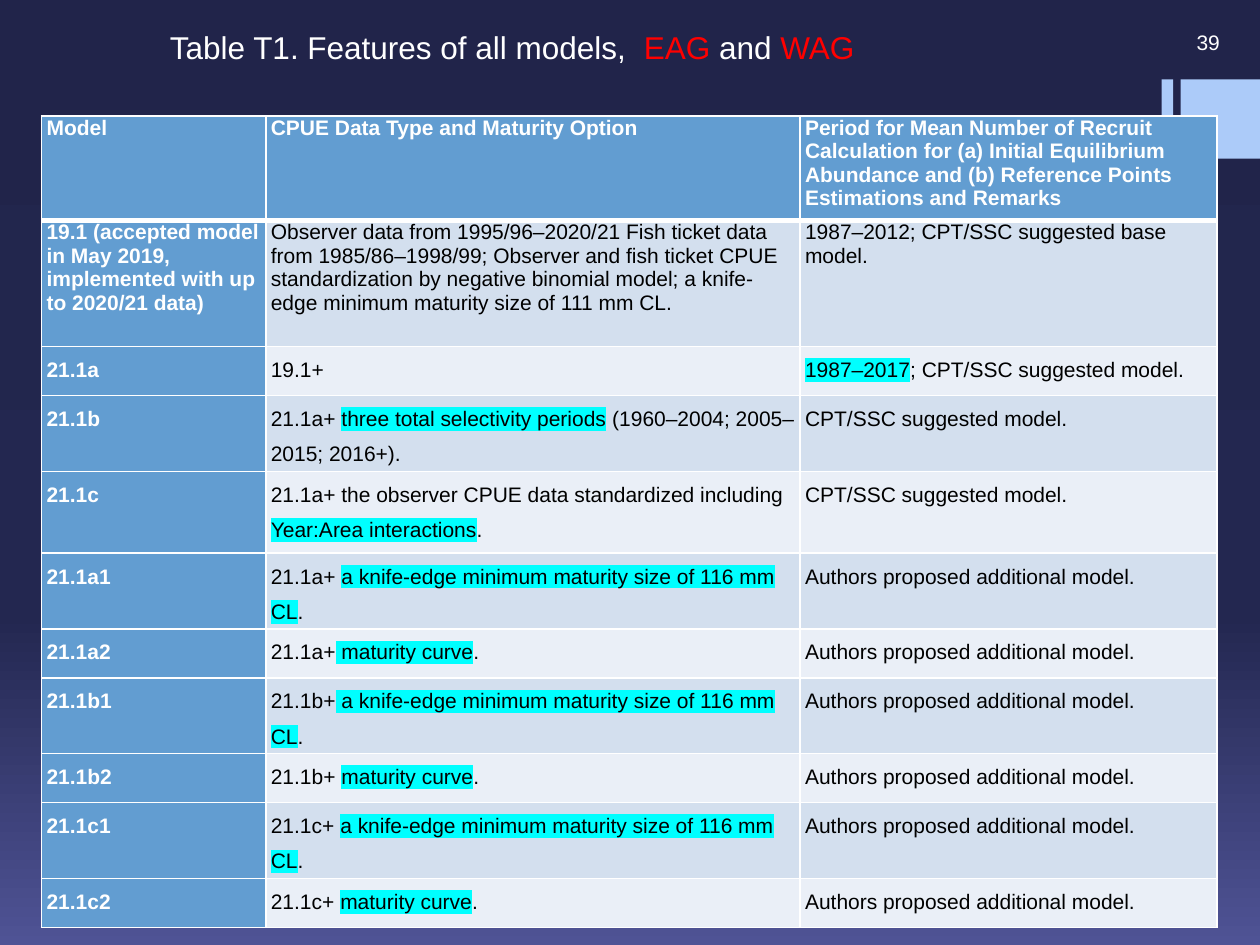
import copy

import pptx
import pptx.dml.color
import pptx.enum.shapes
import pptx.enum.text
import pptx.oxml
import pptx.oxml.ns
import pptx.util

RGBColor = pptx.dml.color.RGBColor
PP_ALIGN = pptx.enum.text.PP_ALIGN
MSO_ANCHOR = pptx.enum.text.MSO_ANCHOR
qn = pptx.oxml.ns.qn

WHITE = RGBColor(0xFF, 0xFF, 0xFF)
BLACK = RGBColor(0, 0, 0)
RED = RGBColor(0xFF, 0, 0)
CYAN = RGBColor(0, 0xFF, 0xFF)
ACCENT = RGBColor(0xAC, 0xCB, 0xF9)
HEADING = RGBColor(0x62, 0x9D, 0xD1)
BANDS = [RGBColor(0xEA, 0xEF, 0xF7), RGBColor(0xD3, 0xDF, 0xEE)]
BACKDROP = [(0, RGBColor(0x21, 0x24, 0x4A)),
            (0.65, RGBColor(0x23, 0x27, 0x50)),
            (1, RGBColor(0x4F, 0x53, 0x95))]

FONT = "Arial"
WIDTH = pptx.util.Inches(10)
HEIGHT = pptx.util.Inches(7.5)

COLUMNS = [1.78, 4.24, 3.31]
SINGLE = 0.39
ROWS = [0.83, 1, SINGLE, 0.41, 0.65] + [SINGLE] * 6

SUGGESTED = "CPT/SSC suggested model."
PROPOSED = "Authors proposed additional model."
KNIFE_EDGE = "a knife-edge minimum maturity size of 116 mm CL"
MODELS = [
    ("Model", "CPUE Data Type and Maturity Option",
     "Period for Mean Number of Recruit Calculation for (a) Initial Equilibrium "
     "Abundance and (b) Reference Points Estimations and Remarks"),
    ("19.1 (accepted model in May 2019, implemented with up to 2020/21 data)",
     "Observer data from 1995/96–2020/21 Fish ticket data from 1985/86–1998/99; "
     "Observer and fish ticket CPUE standardization by negative binomial model; "
     "a knife-edge minimum maturity size of 111 mm CL.",
     "1987–2012; CPT/SSC suggested base model."),
    ("21.1a", "19.1+", "|1987–2017|; " + SUGGESTED),
    ("21.1b", "21.1a+ |three total selectivity periods| (1960–2004; 2005–2015; 2016+).",
     SUGGESTED),
    ("21.1c", "21.1a+ the observer CPUE data standardized including "
     "|Year:Area interactions|.", SUGGESTED),
    ("21.1a1", f"21.1a+ |{KNIFE_EDGE}|.", PROPOSED),
    ("21.1a2", "21.1a+| maturity curve|.", PROPOSED),
    ("21.1b1", f"21.1b+| {KNIFE_EDGE}|.", PROPOSED),
    ("21.1b2", "21.1b+ |maturity curve|.", PROPOSED),
    ("21.1c1", f"21.1c+ |{KNIFE_EDGE}|.", PROPOSED),
    ("21.1c2", "21.1c+ |maturity curve|.", PROPOSED),
]


def area(left, top, width, height):
    return (int(WIDTH * left / 10), int(HEIGHT * top / 7.5),
            int(WIDTH * width / 10), int(HEIGHT * height / 7.5))


def add_span(para, text, size, color, bold=False):
    span = para.add_run()
    span.text = text
    span.font.name = FONT
    span.font.size = pptx.util.Pt(size)
    span.font.bold = bold
    span.font.color.rgb = color
    return span


def highlight(span):
    mark = pptx.oxml.parse_xml(
        f'<a:highlight {pptx.oxml.ns.nsdecls("a")}><a:srgbClr val="{CYAN}"/></a:highlight>')
    span.font.fill
    span.font.color.rgb = BLACK
    span.font.name = FONT
    properties = span.font.color and span.text and para_properties(span)
    properties.find(qn("a:solidFill")).addnext(mark)


def para_properties(span):
    return next(item for item in span._r if item.tag == qn("a:rPr"))


def paint_background(slide):
    fill = slide.background.fill
    fill.gradient()
    fill.gradient_angle = 270
    first = next(slide.element.iter(qn("a:gs")))
    first.addnext(copy.deepcopy(first))
    for stop, (position, color) in zip(fill.gradient_stops, BACKDROP):
        stop.position = position
        stop.color.rgb = color


def add_corner(slide, box):
    left, top, width, height = box
    square = height
    bar = width * 9 // 78
    for start, size in [(left, bar), (left + width - square, square)]:
        shape = slide.shapes.add_shape(
            pptx.enum.shapes.MSO_SHAPE.RECTANGLE, start, top, size, height)
        shape.shadow.inherit = False
        shape.fill.solid()
        shape.fill.fore_color.rgb = ACCENT
        shape.line.fill.background()


def add_line(slide, box, spans, size, align=PP_ALIGN.LEFT, anchor=MSO_ANCHOR.TOP):
    frame = slide.shapes.add_textbox(*box).text_frame
    frame.word_wrap = True
    frame.vertical_anchor = anchor
    para = frame.paragraphs[0]
    para.alignment = align
    for text, color in spans:
        add_span(para, text, size, color)


def set_borders(cell, row):
    heavy = {0: "B", 1: "T"}.get(row)
    properties = cell._tc.get_or_add_tcPr()
    for index, side in enumerate("LRTB"):
        width = pptx.util.Pt(3 if side == heavy else 1)
        properties.insert(index, pptx.oxml.parse_xml(
            f'<a:ln{side} {pptx.oxml.ns.nsdecls("a")} w="{width}"><a:solidFill>'
            f'<a:srgbClr val="{WHITE}"/></a:solidFill></a:ln{side}>'))


def fill_cell(cell, text, row, column):
    heading = row == 0 or column == 0
    cell.margin_left = cell.margin_right = pptx.util.Inches(0.04)
    cell.margin_top = cell.margin_bottom = 0
    cell.fill.solid()
    cell.fill.fore_color.rgb = HEADING if heading else BANDS[row % 2]
    set_borders(cell, row)
    para = cell.text_frame.paragraphs[0]
    if column == 0 and row != 1:
        para.alignment = PP_ALIGN.JUSTIFY
    if row > 1:
        para.line_spacing = 1.5
    for index, part in enumerate(text.split("|")):
        if part:
            span = add_span(para, part, 12, WHITE if heading else BLACK, heading)
            if index % 2:
                highlight(span)


def add_models(slide, box):
    table = slide.shapes.add_table(len(ROWS), len(COLUMNS), *box).table
    for column, share in zip(table.columns, COLUMNS):
        column.width = int(box[2] * share / sum(COLUMNS))
    for row, height in zip(table.rows, ROWS):
        row.height = pptx.util.Inches(height)
    for row, texts in enumerate(MODELS):
        for column, text in enumerate(texts):
            fill_cell(table.cell(row, column), text, row, column)


def main():
    deck = pptx.Presentation()
    deck.slide_width, deck.slide_height = WIDTH, HEIGHT
    slide = deck.slides.add_slide(deck.slide_layouts[6])
    paint_background(slide)
    add_corner(slide, area(9.22, 0.63, 0.78, 0.63))
    add_line(slide, area(8.75, 0.17, 1.03, 0.33), [("39", WHITE)], 12,
             PP_ALIGN.RIGHT, MSO_ANCHOR.MIDDLE)
    add_line(slide, area(1.25, 0.17, 6.75, 0.4),
             [("Table T1. Features of all models,  ", WHITE), ("EAG", RED),
              (" and ", WHITE), ("WAG", RED)], 18)
    add_models(slide, area(0.33, 0.92, 9.33, 6.3))
    deck.save("out.pptx")


if __name__ == "__main__":
    main()
